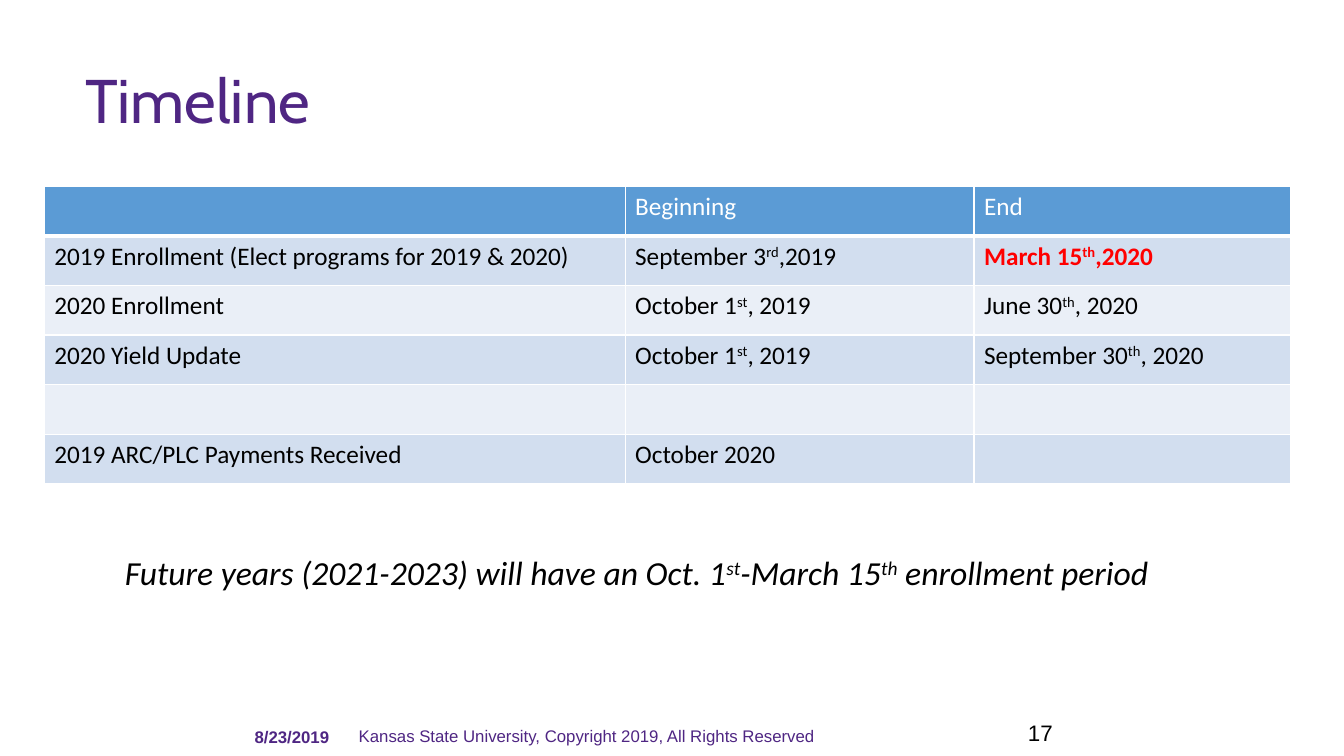
"""Build the enrollment timeline slide."""
from dataclasses import dataclass

import lxml.etree
import pptx
import pptx.dml.color
import pptx.enum.text
import pptx.oxml.ns
import pptx.util

Inches = pptx.util.Inches
ALIGN = pptx.enum.text.PP_ALIGN
ANCHOR = pptx.enum.text.MSO_ANCHOR


@dataclass(frozen=True)
class Theme:
    """Colours, fonts and type sizes of the slide."""
    purple: str = "4F2683"
    black: str = "000000"
    white: str = "FFFFFF"
    red: str = "FF0000"
    header: str = "5B9BD5"
    bands: tuple = ("D2DEEF", "EAEFF7")
    title_font: str = "Cabin"
    body_font: str = "Calibri"
    footer_font: str = "Arial"
    title_size: int = 44
    note_size: int = 24
    table_size: int = 18
    number_size: int = 16
    footer_size: int = 12


THEME = Theme()
COLUMN_WIDTHS = (5.76, 3.46, 3.14)
TIMELINE = (
    ("", "Beginning", "End"),
    ("2019 Enrollment (Elect programs for 2019 & 2020)", "September 3^rd^,2019", "March 15^th^,2020"),
    ("2020 Enrollment", "October 1^st^, 2019", "June 30^th^, 2020"),
    ("2020 Yield Update", "October 1^st^, 2019", "September 30^th^, 2020"),
    ("", "", ""),
    ("2019 ARC/PLC Payments Received", "October 2020", ""),
)
DEADLINE = (1, 2)


def rgb(value):
    """Turn a hex string into a colour."""
    return pptx.dml.color.RGBColor.from_string(value)


def write(paragraph, text, color, **formats):
    """Write text into a paragraph, raising the parts between carets."""
    for index, part in enumerate(text.split("^")):
        run = paragraph.add_run()
        run.text = part
        for name, value in formats.items():
            setattr(run.font, name, value)
        run.font.color.rgb = rgb(color)
        if index % 2:
            run._r.get_or_add_rPr().set("baseline", "30000")


def add_text(slide, box, text, color, anchor=ANCHOR.TOP, align=ALIGN.LEFT, **formats):
    """Place one line of text in a box and return its shape."""
    shape = slide.shapes.add_textbox(*map(Inches, box))
    frame = shape.text_frame
    for name, value in {"word_wrap": True, "vertical_anchor": anchor}.items():
        setattr(frame, name, value)
    frame.paragraphs[0].alignment = align
    write(frame.paragraphs[0], text, color, **formats)
    return shape


def fill_solid(target, color):
    """Give a shape or cell a solid fill."""
    target.fill.solid()
    target.fill.fore_color.rgb = rgb(color)


def add_title(slide, box):
    """Place the title on its translucent white panel."""
    shape = add_text(slide, box, "Timeline", THEME.purple, ANCHOR.MIDDLE,
                     name=THEME.title_font, size=pptx.util.Pt(THEME.title_size))
    shape.text_frame.paragraphs[0].line_spacing = 0.9
    fill_solid(shape, THEME.white)
    color = shape._element.spPr.find(".//" + pptx.oxml.ns.qn("a:srgbClr"))
    lxml.etree.SubElement(color, pptx.oxml.ns.qn("a:alpha"), val="86000")


def add_borders(cell, bottom_width):
    """Draw white borders around a cell."""
    properties = cell._tc.get_or_add_tcPr()
    widths = {"lnL": 1, "lnR": 1, "lnT": 1, "lnB": bottom_width}
    for index, (tag, width) in enumerate(widths.items()):
        line = lxml.etree.Element(pptx.oxml.ns.qn(f"a:{tag}"), w=str(pptx.util.Pt(width)))
        fill = lxml.etree.SubElement(line, pptx.oxml.ns.qn("a:solidFill"))
        lxml.etree.SubElement(fill, pptx.oxml.ns.qn("a:srgbClr"), val=THEME.white)
        properties.insert(index, line)


def add_timeline(slide, box):
    """Place the banded timeline table."""
    frame = slide.shapes.add_table(len(TIMELINE), len(COLUMN_WIDTHS), *map(Inches, box))
    table = frame.table
    for column, width in zip(table.columns, COLUMN_WIDTHS):
        column.width = Inches(width)
    for row, texts in enumerate(TIMELINE):
        for column, text in enumerate(texts):
            cell = table.cell(row, column)
            is_deadline = (row, column) == DEADLINE
            fill_solid(cell, THEME.bands[(row - 1) % 2] if row else THEME.header)
            add_borders(cell, 1 if row else 3)
            color = THEME.red if is_deadline else THEME.black if row else THEME.white
            if text:
                write(cell.text_frame.paragraphs[0], text, color, name=THEME.body_font,
                      size=pptx.util.Pt(THEME.table_size), bold=is_deadline)


def add_note(slide, box):
    """Place the note on future years."""
    shape = add_text(slide, box, "Future years (2021-2023) will have an Oct. 1^st^-March 15^th^ enrollment period",
                     THEME.black, name=THEME.body_font, size=pptx.util.Pt(THEME.note_size), italic=True)
    fill_solid(shape, THEME.white)


def add_footer(slide, box):
    """Place the date, copyright line and slide number."""
    left, top, width, height = box
    small = {"name": THEME.footer_font, "size": pptx.util.Pt(THEME.footer_size)}
    add_text(slide, (left + width - 0.58, top, 0.58, 0.41), "17", THEME.black, ANCHOR.BOTTOM, ALIGN.RIGHT,
             name=THEME.footer_font, size=pptx.util.Pt(THEME.number_size))
    add_text(slide, (left + 1.16, top + 0.11, 6.83, 0.3),
             "Kansas State University, Copyright 2019, All Rights Reserved", THEME.purple, ANCHOR.MIDDLE, **small)
    add_text(slide, (left, top + 0.12, 1.19, height - 0.12), "8/23/2019", THEME.purple,
             align=ALIGN.CENTER, bold=True, **small)


def main():
    """Build and save the presentation."""
    presentation = pptx.Presentation()
    presentation.slide_width = Inches(13.33)
    presentation.slide_height = Inches(7.5)
    slide = presentation.slides.add_slide(presentation.slide_layouts[6])
    add_footer(slide, (2.3, 7.04, 8.24, 0.46))
    add_title(slide, (0.75, 0.64, 11.82, 0.78))
    add_timeline(slide, (0.44, 1.85, sum(COLUMN_WIDTHS), 2.95))
    add_note(slide, (1.14, 5.43, 10.92, 0.81))
    presentation.save("out.pptx")


if __name__ == "__main__":
    main()
